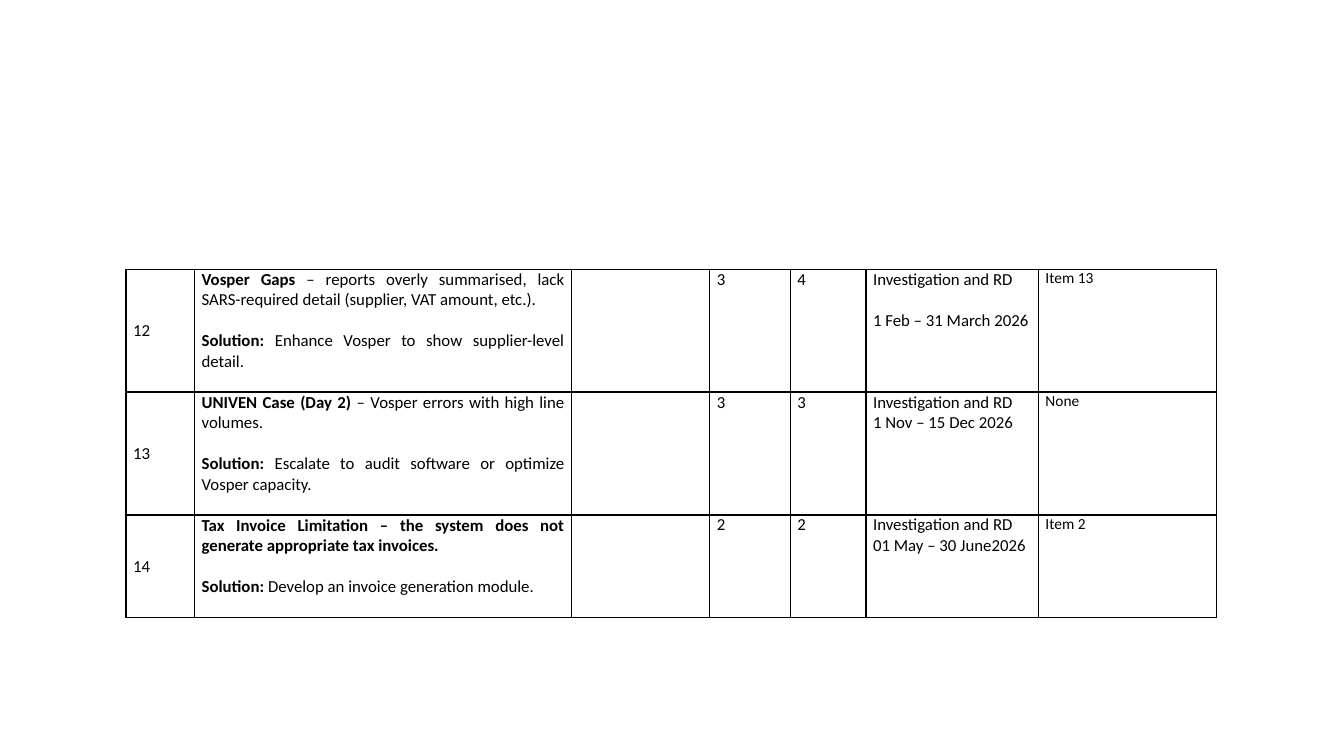
from lxml import etree
from pptx import Presentation
from pptx.dml.color import RGBColor
from pptx.enum.text import MSO_ANCHOR as Anchor, PP_ALIGN as Align
from pptx.oxml.ns import qn
from pptx.util import Inches, Pt

BLACK = RGBColor(0x00, 0x00, 0x00)
FONT = "Calibri"
BLANK_LINE = Pt(14.65)

COLUMN_WIDTHS = [0.68, 3.74, 1.37, 0.8, 0.75, 1.71, 1.77]
ROW_HEIGHTS = [1.22, 1.22, 1.02]

# Number, issue (bold part, plain part), solution, two scores, schedule,
# gap between the schedule lines, dependency
ITEMS = [
    ("12", ("Vosper Gaps", " – reports overly summarised, lack SARS-required detail "
            "(supplier, VAT amount, etc.)."),
     " Enhance Vosper to show supplier-level detail.",
     "3", "4", ("Investigation and RD", "1 Feb – 31 March 2026"), BLANK_LINE, "Item 13"),
    ("13", ("UNIVEN Case (Day 2)", " – Vosper errors with high line volumes."),
     " Escalate to audit software or optimize Vosper capacity.",
     "3", "3", ("Investigation and RD", "1 Nov – 15 Dec 2026"), Pt(0), "None"),
    ("14", ("Tax Invoice Limitation – the system does not generate appropriate "
            "tax invoices.", ""),
     " Develop an invoice generation module.",
     "2", "2", ("Investigation and RD", "01 May – 30 June2026"), Pt(0), "Item 2"),
]


def set_borders(cell):
    properties = cell._tc.get_or_add_tcPr()
    for position, side in enumerate(("a:lnL", "a:lnR", "a:lnT", "a:lnB")):
        line = etree.Element(qn(side), w=str(Pt(1)))
        fill = etree.SubElement(line, qn("a:solidFill"))
        etree.SubElement(fill, qn("a:srgbClr"), val=str(BLACK))
        properties.insert(position, line)


def fill_cell(cell, paragraphs, size=12, gap=Pt(0)):
    """Write paragraphs, each a (bold, plain) pair, with a gap between them."""
    frame = cell.text_frame
    for index, (bold_text, plain_text) in enumerate(paragraphs):
        paragraph = frame.add_paragraph() if index else frame.paragraphs[0]
        paragraph.alignment = Align.JUSTIFY
        if index:
            paragraph.space_before = gap
        paragraph.font.name = FONT
        paragraph.font.size = Pt(size)
        paragraph.font.color.rgb = BLACK
        for text, bold in ((bold_text, True), (plain_text, False)):
            if text:
                run = paragraph.add_run()
                run.text = text
                run.font.bold = bold


def add_issue_table(slide, left, top):
    frame = slide.shapes.add_table(
        len(ITEMS), len(COLUMN_WIDTHS), Inches(left), Inches(top),
        Inches(sum(COLUMN_WIDTHS)), Inches(sum(ROW_HEIGHTS)))
    table = frame.table
    table.first_row = table.horz_banding = False
    for column, width in zip(table.columns, COLUMN_WIDTHS):
        column.width = Inches(width)
    for row, height in zip(table.rows, ROW_HEIGHTS):
        row.height = Inches(height)

    # Shared cell format
    for cell in table.iter_cells():
        cell.fill.background()
        cell.margin_left = cell.margin_right = Inches(0.07)
        cell.margin_top = cell.margin_bottom = 0
        set_borders(cell)

    # Contents; the third column stays empty
    for row, item in zip(table.rows, ITEMS):
        number, issue, solution, score, rank, schedule, gap, dependency = item
        cells = row.cells
        fill_cell(cells[0], [("", number)])
        fill_cell(cells[1], [issue, ("Solution:", solution)], gap=BLANK_LINE)
        fill_cell(cells[3], [("", score)])
        fill_cell(cells[4], [("", rank)])
        fill_cell(cells[5], [("", line) for line in schedule], gap=gap)
        fill_cell(cells[6], [("", dependency)], size=11)
        cells[0].vertical_anchor = cells[1].vertical_anchor = Anchor.MIDDLE
        cells[1].margin_bottom = Inches(0.2)


def main():
    presentation = Presentation()
    presentation.slide_width = Inches(13.33)
    presentation.slide_height = Inches(7.5)
    slide = presentation.slides.add_slide(presentation.slide_layouts[6])
    add_issue_table(slide, 1.25, 2.67)
    presentation.save("out.pptx")


if __name__ == "__main__":
    main()
